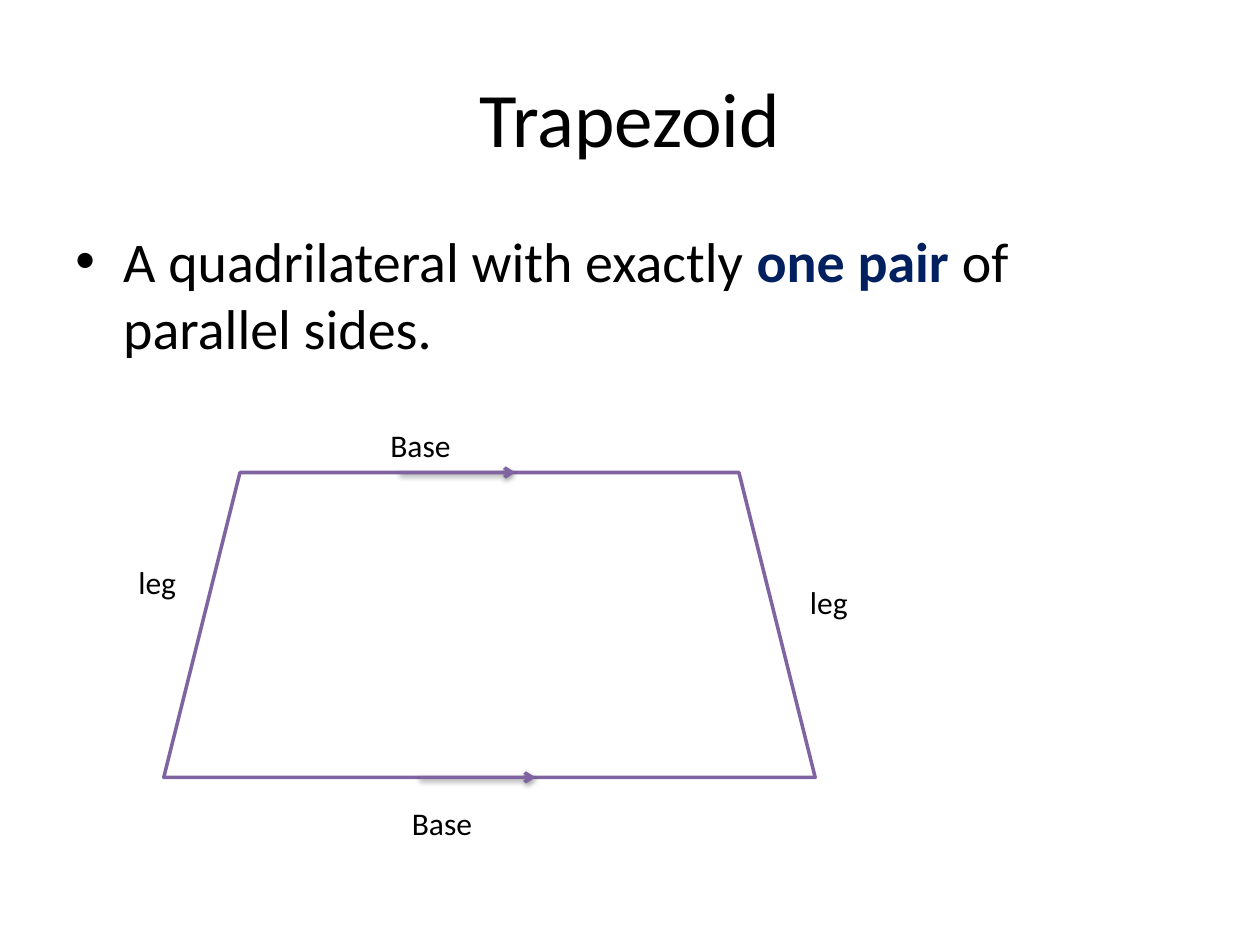
import pptx
import pptx.util
import pptx.dml.color
import pptx.enum.shapes
import pptx.enum.text
import pptx.oxml
import pptx.oxml.ns

Inches = pptx.util.Inches
Pt = pptx.util.Pt
Align = pptx.enum.text.PP_ALIGN
Anchor = pptx.enum.text.MSO_ANCHOR

COLORS = {"text": "000000", "accent": "002060", "outline": "8064A2", "paper": "FFFFFF"}
FONT = "Calibri"

TITLE = "Trapezoid"
DEFINITION = [
    ("A quadrilateral with exactly ", "text", False),
    ("one pair ", "accent", True),
    ("of parallel sides.", "text", False),
]
TRAPEZOID = (1.3, 3.75, 5.17, 2.42)
ARROW_STARTS = [3.17, 3.33]
ARROW_LENGTH = 0.92
LABELS = [
    ("leg", (6.33, 4.58, 2.17, 0.42), True),
    ("leg", (1, 4.42, 2.17, 0.42), True),
    ("Base", (3, 3.33, 2.33, 0.4), True),
    ("Base", (3.17, 6.33, 0.68, 0.4), False),
]
NAMESPACE = pptx.oxml.ns.nsdecls("a")
BULLET = [
    f'<a:buFont {NAMESPACE} typeface="Arial"/>',
    f'<a:buChar {NAMESPACE} char="•"/>',
]
TAIL = f'<a:tailEnd {NAMESPACE} type="arrow"/>'
SHADOW = (
    f'<a:effectLst {NAMESPACE}><a:outerShdw blurRad="40000" dist="20000" dir="5400000" '
    'rotWithShape="0"><a:srgbClr val="000000"><a:alpha val="38000"/></a:srgbClr>'
    '</a:outerShdw></a:effectLst>'
)


def color(name):
    return pptx.dml.color.RGBColor.from_string(COLORS[name])


def inches(values):
    return [Inches(value) for value in values]


def write(box, spans, size=18, align=Align.LEFT, anchor=Anchor.TOP, wrap=True):
    frame = box.text_frame
    frame.word_wrap = wrap
    frame.vertical_anchor = anchor
    para = frame.paragraphs[0]
    para.alignment = align
    for text, tone, bold in spans:
        span = para.add_run()
        span.text = text
        span.font.name = FONT
        span.font.size = Pt(size)
        span.font.bold = bold
        span.font.color.rgb = color(tone)
    return para


def outline(shape):
    shape.line.color.rgb = color("outline")
    shape.line.width = Pt(2)


def add_arrow(page, left, top):
    arrow = page.shapes.add_connector(
        pptx.enum.shapes.MSO_CONNECTOR.STRAIGHT,
        *inches((left, top, left + ARROW_LENGTH, top)),
    )
    outline(arrow)
    arrow.line._get_or_add_ln().append(pptx.oxml.parse_xml(TAIL))
    arrow._element.spPr.append(pptx.oxml.parse_xml(SHADOW))


def main():
    deck = pptx.Presentation()
    deck.slide_width, deck.slide_height = inches((10, 7.5))
    page = deck.slides.add_slide(deck.slide_layouts[5])

    title = page.shapes.title
    title.left, title.top, title.width, title.height = inches((0.5, 0.3, 9, 1.25))
    write(title, [(TITLE, "text", False)], size=44, align=Align.CENTER, anchor=Anchor.MIDDLE)

    body = page.shapes.add_textbox(*inches((0.5, 1.75, 9, 4.95)))
    para = write(body, DEFINITION, size=32)
    para.space_before = Pt(6.4)
    properties = para._p.get_or_add_pPr()
    properties.set("marL", str(Inches(0.38)))
    properties.set("indent", str(Inches(-0.38)))
    for mark in BULLET:
        properties.append(pptx.oxml.parse_xml(mark))

    trapezoid = page.shapes.add_shape(
        pptx.enum.shapes.MSO_SHAPE.TRAPEZOID, *inches(TRAPEZOID)
    )
    trapezoid.shadow.inherit = False
    trapezoid.fill.solid()
    trapezoid.fill.fore_color.rgb = color("paper")
    outline(trapezoid)

    top, height = TRAPEZOID[1], TRAPEZOID[3]
    for left, base in zip(ARROW_STARTS, (top, top + height)):
        add_arrow(page, left, base)

    for text, place, wrap in LABELS:
        box = page.shapes.add_textbox(*inches(place))
        write(box, [(text, "text", False)], wrap=wrap)
        box.text_frame.auto_size = pptx.enum.text.MSO_AUTO_SIZE.SHAPE_TO_FIT_TEXT

    deck.save("out.pptx")


if __name__ == "__main__":
    main()
